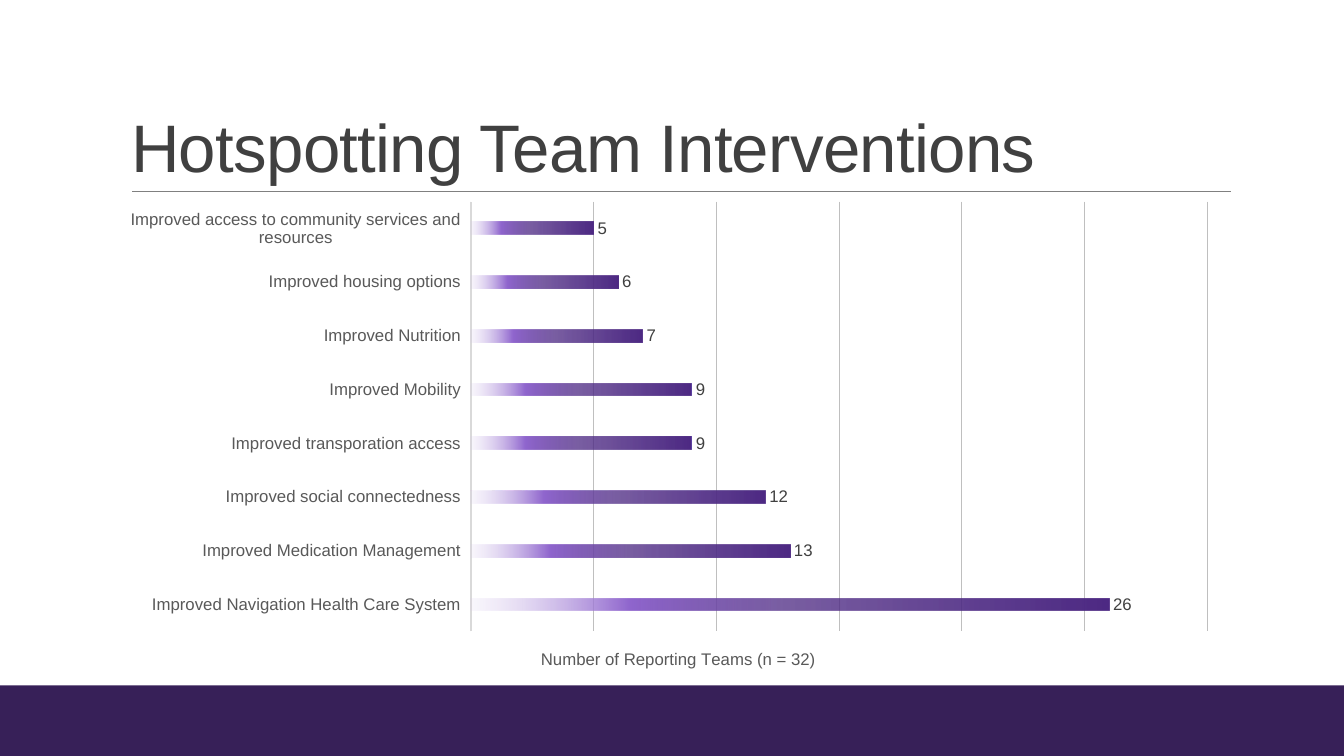
from lxml import etree
from pptx import Presentation
from pptx.chart.data import CategoryChartData
from pptx.dml.color import RGBColor
from pptx.enum.chart import XL_CHART_TYPE, XL_LABEL_POSITION, XL_TICK_LABEL_POSITION, XL_TICK_MARK
from pptx.enum.shapes import MSO_CONNECTOR, MSO_SHAPE
from pptx.enum.text import MSO_ANCHOR, MSO_AUTO_SIZE
from pptx.oxml import parse_xml
from pptx.oxml.ns import nsdecls, qn
from pptx.util import Cm, Pt

BAR = XL_CHART_TYPE.BAR_CLUSTERED
OUTSIDE_END = XL_LABEL_POSITION.OUTSIDE_END
LABELS_LOW = XL_TICK_LABEL_POSITION.LOW
NO_TICK = XL_TICK_MARK.NONE
RECT = MSO_SHAPE.RECTANGLE
STRAIGHT = MSO_CONNECTOR.STRAIGHT
BOTTOM = MSO_ANCHOR.BOTTOM
NO_FIT = MSO_AUTO_SIZE.NONE

PURPLE = RGBColor(0x37, 0x20, 0x58)
RULE_GRAY = RGBColor(0x80, 0x80, 0x80)
DARK = RGBColor(0x40, 0x40, 0x40)
LABEL_GRAY = RGBColor(0x59, 0x59, 0x59)
AXIS_GRAY = RGBColor(0xD9, 0xD9, 0xD9)
GRID_GRAY = RGBColor(0xBF, 0xBF, 0xBF)
BAR_DARK = RGBColor(0x4E, 0x2A, 0x84)
BAR_MID = RGBColor(0x90, 0x66, 0xCE)
BAR_LIGHT = RGBColor(0xDA, 0xCC, 0xEF)

# position %, colour, opacity %
BAR_STOPS = [(0, BAR_DARK, 100), (51, BAR_DARK, 75), (75, BAR_MID, 100), (100, BAR_LIGHT, 15)]

INTERVENTIONS = [
    ("Improved Navigation Health Care System", 26),
    ("Improved Medication Management", 13),
    ("Improved social connectedness", 12),
    ("Improved transporation access", 9),
    ("Improved Mobility", 9),
    ("Improved Nutrition", 7),
    ("Improved housing options", 6),
    ("Improved access to community services and resources", 5),
]


class SlideBuilder:
    font_name = "Arial"

    def __init__(self, prs):
        self.slide = prs.slides.add_slide(prs.slide_layouts[5])

    def set_font(self, font, size, color):
        values = {"name": self.font_name, "size": Pt(size), "bold": False}
        for key, value in values.items():
            setattr(font, key, value)
        font.color.rgb = color

    def title(self, text, left, top, width, height):
        sp = self.slide.shapes.title
        box = {"left": left, "top": top, "width": width, "height": height}
        for key, value in box.items():
            setattr(sp, key, Cm(value))
        tf = sp.text_frame
        for key, value in {"vertical_anchor": BOTTOM, "word_wrap": True, "auto_size": NO_FIT}.items():
            setattr(tf, key, value)
        p = tf.paragraphs[0]
        p.alignment = 1
        p.line_spacing = 0.85
        r = p.add_run()
        r.text = text
        self.set_font(r.font, 48, DARK)
        r.font._element.set("spc", "-50")

    def band(self, left, top, width, height, color):
        sp = self.slide.shapes.add_shape(RECT, Cm(left), Cm(top), Cm(width), Cm(height))
        sp.shadow.inherit = False
        sp.fill.solid()
        sp.fill.fore_color.rgb = color
        sp.line.fill.background()

    def rule(self, left, right, y, color):
        line = self.slide.shapes.add_connector(STRAIGHT, Cm(left), Cm(y), Cm(right), Cm(y))
        line.line.color.rgb = color
        line.line.width = Pt(0.5)
        etree.SubElement(line._element.spPr, qn("a:effectLst"))

    def bar_chart(self, rows, caption, left, top, width, height):
        data = CategoryChartData()
        data.categories = [name for name, _ in rows]
        data.add_series("Series 1", [value for _, value in rows])
        frame = self.slide.shapes.add_chart(BAR, Cm(left), Cm(top), Cm(width), Cm(height), data)
        chart = frame.chart
        chart.has_legend = False
        self.set_font(chart.font, 10, LABEL_GRAY)

        chart.has_title = True
        p = chart.chart_title.text_frame.paragraphs[0]
        r = p.add_run()
        r.text = caption
        self.set_font(r.font, 12, LABEL_GRAY)
        self.place(chart.chart_title._element, 1, x=0.38, y=0.92)
        plot_area = chart._chartSpace.chart.plotArea
        self.place(plot_area, 0, x=0.32, y=0.02, w=0.66, h=0.87)

        axis = chart.category_axis
        axis.major_tick_mark = axis.minor_tick_mark = NO_TICK
        axis.tick_label_position = LABELS_LOW
        axis.format.line.color.rgb = AXIS_GRAY
        axis.format.line.width = Pt(1.5)
        self.set_font(axis.tick_labels.font, 12, LABEL_GRAY)

        scale = {"minimum_scale": 0, "maximum_scale": 30, "major_unit": 5,
                 "has_major_gridlines": True, "visible": False}
        for key, value in scale.items():
            setattr(chart.value_axis, key, value)
        grid = chart.value_axis.major_gridlines.format.line
        grid.color.rgb = GRID_GRAY
        grid.width = Pt(0.75)

        plot = chart.plots[0]
        for key, value in {"gap_width": 326, "overlap": -58, "vary_by_categories": False,
                           "has_data_labels": True}.items():
            setattr(plot, key, value)
        labels = plot.data_labels
        labels.show_value = True
        labels.position = OUTSIDE_END
        self.set_font(labels.font, 12, DARK)
        self.gradient(plot.series[0])

    def place(self, element, index, **fractions):
        """Give a chart part a manual layout in fractions of the chart."""
        for old in element.findall(qn("c:layout")):
            element.remove(old)
        target = '<c:layoutTarget val="inner"/>' if "w" in fractions else ""
        modes = "".join(f'<c:{key}Mode val="edge"/>' for key in "xy")
        values = "".join(f'<c:{key} val="{value}"/>' for key, value in fractions.items())
        element.insert(index, parse_xml(
            f'<c:layout {nsdecls("c")}><c:manualLayout>{target}{modes}{values}'
            '</c:manualLayout></c:layout>'))

    def gradient(self, series):
        """Fill the bars from dark at the tip to nearly clear at the axis."""
        stops = "".join(
            f'<a:gs pos="{pos * 1000}"><a:srgbClr val="{color}">'
            f'<a:alpha val="{opacity * 1000}"/></a:srgbClr></a:gs>'
            for pos, color, opacity in BAR_STOPS)
        series.format.line.fill.background()
        sp_pr = series._element.find(qn("c:spPr"))
        sp_pr.insert(0, parse_xml(
            f'<a:gradFill {nsdecls("a")}><a:gsLst>{stops}</a:gsLst>'
            '<a:lin ang="10800000" scaled="0"/></a:gradFill>'))


def main():
    prs = Presentation()
    prs.slide_width, prs.slide_height = Cm(33.87), Cm(19.05)
    s = SlideBuilder(prs)
    s.band(0, 17.27, 33.87, 1.78, PURPLE)
    s.rule(3.33, 31.01, 4.83, RULE_GRAY)
    s.title("Hotspotting Team Interventions", 3.05, 0.79, 27.94, 4.04)
    s.bar_chart(INTERVENTIONS, "Number of Reporting Teams (n = 32)", 2.87, 4.83, 28.12, 12.45)
    prs.save("out.pptx")


if __name__ == "__main__":
    main()
